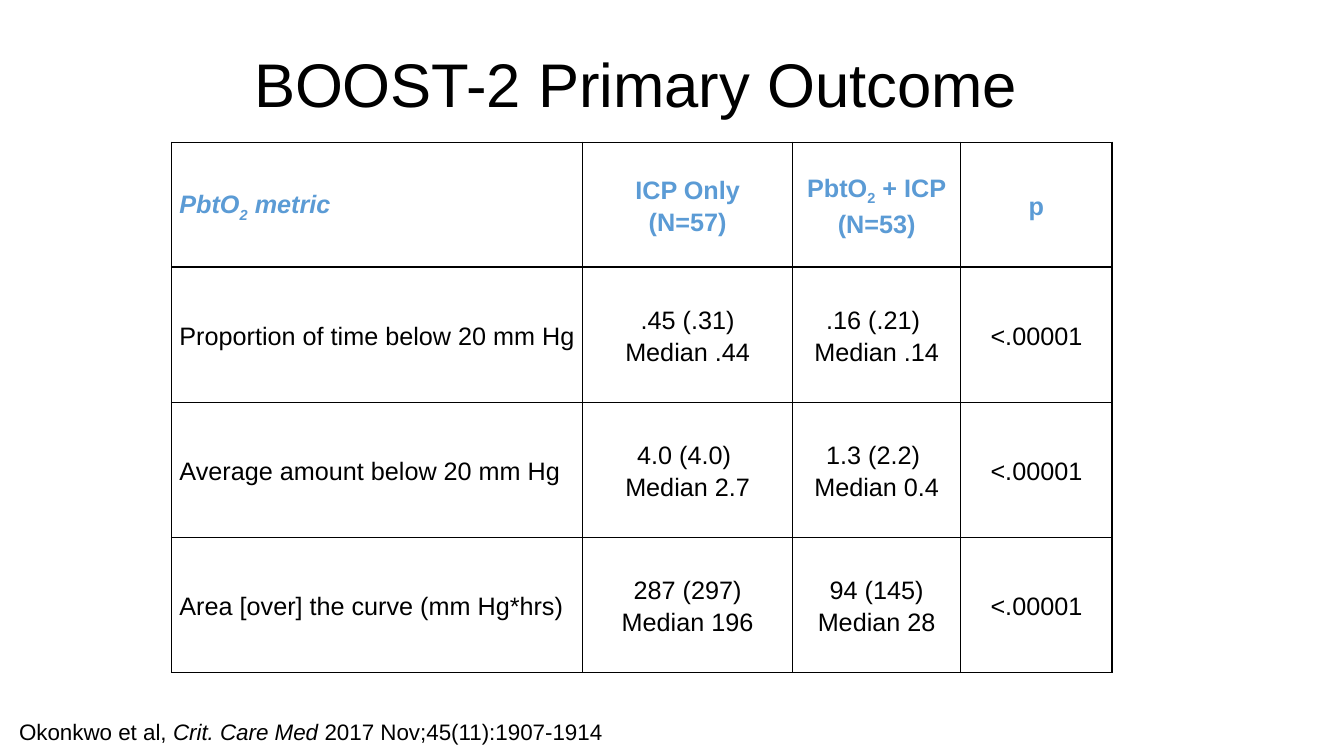
"""Build the BOOST-2 primary outcome slide."""
from lxml.etree import SubElement
from pptx import Presentation
from pptx.dml.color import RGBColor
from pptx.enum.text import MSO_ANCHOR, MSO_AUTO_SIZE, PP_ALIGN
from pptx.oxml.ns import qn
from pptx.util import Inches, Pt

BLACK, BLUE = "000000", "5B9BD5"
COLUMN_WIDTHS = [4.08, 2.08, 1.67, 1.5]
ROW_HEIGHTS = [1.24, 1.34, 1.34, 1.34]
OUTCOMES = [
    ["PbtO~2~ metric", "ICP Only\v(N=57)", "PbtO~2~ + ICP\v(N=53)", "p"],
    ["Proportion of time below 20 mm Hg", ".45 (.31)\vMedian .44",
     ".16 (.21) \vMedian .14", "<.00001"],
    ["Average amount below 20 mm Hg", "4.0 (4.0) \vMedian 2.7",
     "1.3 (2.2) \vMedian 0.4", "<.00001"],
    ["Area [over] the curve (mm Hg*hrs)", "287 (297)\nMedian 196",
     "94 (145)\nMedian 28", "<.00001"],
]


def apply_format(target, values):
    for name, value in values.items():
        setattr(target, name, value)


def set_color(color_format, hex_color):
    color_format.rgb = RGBColor.from_string(hex_color)


def add_run(paragraph, text, size, color=BLACK, bold=False, italic=False):
    run = paragraph.add_run()
    run.text = text
    apply_format(run.font, {"name": "Arial", "size": Pt(size), "bold": bold, "italic": italic})
    set_color(run.font.color, color)
    return run


def add_marked_text(paragraph, text, **style):
    for part, piece in enumerate(text.split("~")):
        for line, words in enumerate(piece.split("\v")):
            if line:
                paragraph.add_line_break()
            run = add_run(paragraph, words, 18, **style)
            if part % 2:
                run.font._element.set("baseline", "-25000")


def add_borders(cell):
    properties = cell._tc.get_or_add_tcPr()
    for side in ("lnL", "lnR", "lnT", "lnB"):
        border = SubElement(properties, qn(f"a:{side}"), w=str(Pt(1)))
        fill = SubElement(border, qn("a:solidFill"))
        SubElement(fill, qn("a:srgbClr"), val=BLACK)


def fill_cell(cell, text, alignment, **style):
    apply_format(cell, {
        "vertical_anchor": MSO_ANCHOR.MIDDLE,
        "margin_left": Inches(0.08), "margin_right": Inches(0.08),
        "margin_top": Inches(0.04), "margin_bottom": Inches(0.04),
    })
    add_borders(cell)
    cell.fill.background()
    for index, line in enumerate(text.split("\n")):
        frame = cell.text_frame
        paragraph = frame.add_paragraph() if index else frame.paragraphs[0]
        apply_format(paragraph, {"alignment": alignment, "line_spacing": 1.15})
        add_marked_text(paragraph, line, **style)


def add_outcome_table(slide):
    outcome_table = slide.shapes.add_table(
        len(ROW_HEIGHTS), len(COLUMN_WIDTHS), Inches(1.7), Inches(1.41),
        Inches(sum(COLUMN_WIDTHS)), Inches(sum(ROW_HEIGHTS))).table
    apply_format(outcome_table, {"first_row": False, "horz_banding": False})
    for column, width in zip(outcome_table.columns, COLUMN_WIDTHS):
        column.width = Inches(width)
    for row, height in zip(outcome_table.rows, ROW_HEIGHTS):
        row.height = Inches(height)
    for row, texts in enumerate(OUTCOMES):
        header = row == 0
        for column, text in enumerate(texts):
            fill_cell(outcome_table.cell(row, column), text,
                      PP_ALIGN.CENTER if column else PP_ALIGN.LEFT,
                      color=BLUE if header else BLACK, bold=header,
                      italic=header and column == 0)


def add_title(slide):
    title = slide.shapes.title
    apply_format(title, {"left": Inches(2.42), "top": Inches(0.24),
                         "width": Inches(8.5), "height": Inches(1.25)})
    apply_format(title.text_frame, {"vertical_anchor": MSO_ANCHOR.MIDDLE, "word_wrap": True,
                                    "auto_size": MSO_AUTO_SIZE.NONE})
    heading = title.text_frame.paragraphs[0]
    apply_format(heading, {"alignment": PP_ALIGN.LEFT, "line_spacing": 0.9})
    add_run(heading, "BOOST-2 Primary Outcome", 44)


def add_citation(slide):
    citation = slide.shapes.add_textbox(Inches(0.09), Inches(7.08), Inches(6.45), Inches(0.37))
    apply_format(citation.text_frame, {"word_wrap": True,
                                       "auto_size": MSO_AUTO_SIZE.SHAPE_TO_FIT_TEXT})
    reference = citation.text_frame.paragraphs[0]
    add_run(reference, "Okonkwo et al, ", 16)
    add_run(reference, "Crit. Care Med", 16, italic=True)
    add_run(reference, " 2017 Nov;45(11):1907-1914", 16)


def main():
    presentation = Presentation()
    apply_format(presentation, {"slide_width": Inches(13.33), "slide_height": Inches(7.5)})
    slide = presentation.slides.add_slide(presentation.slide_layouts[5])
    add_title(slide)
    add_outcome_table(slide)
    add_citation(slide)
    presentation.save("out.pptx")


if __name__ == "__main__":
    main()
